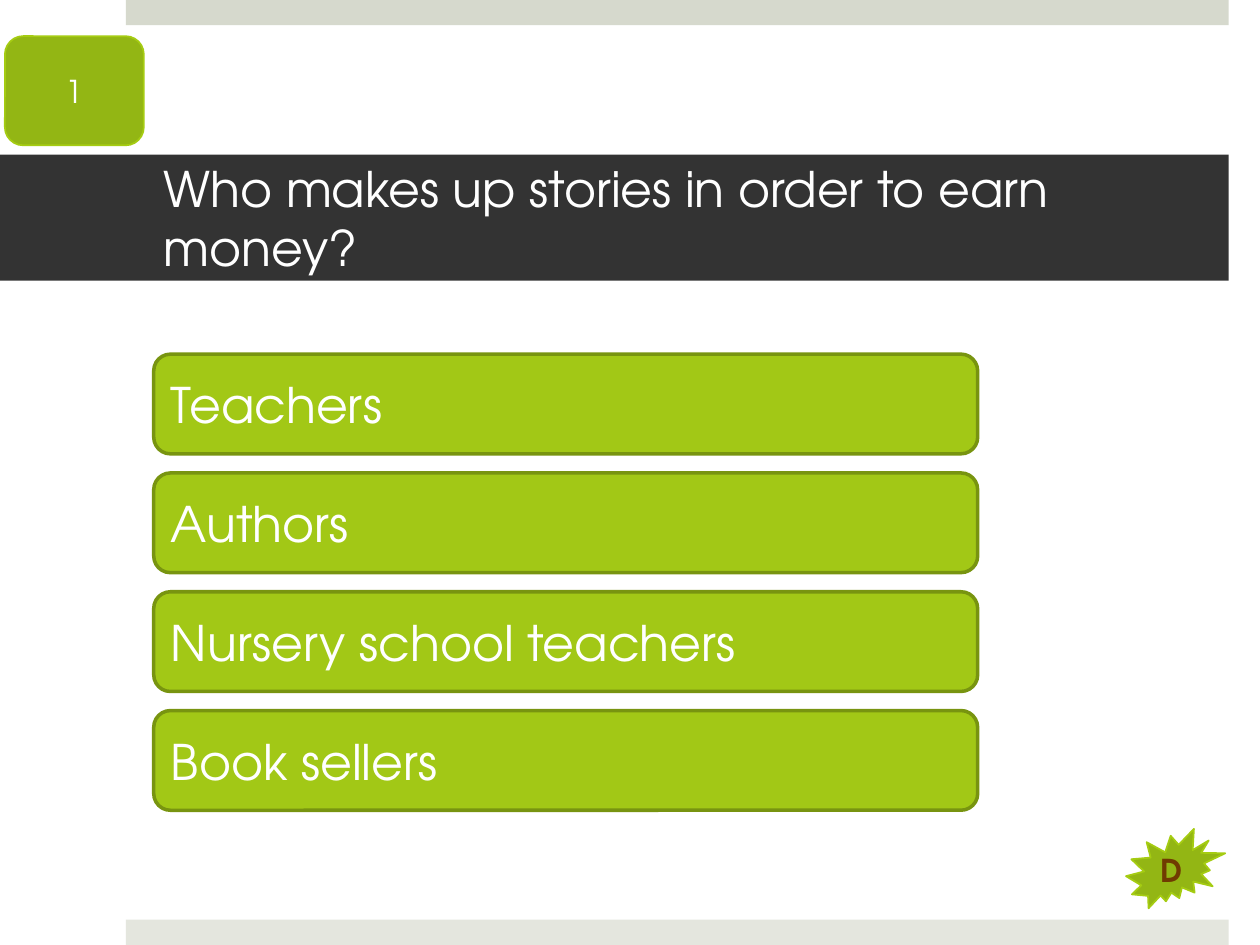
from pptx import Presentation
from pptx import util as u
from pptx.dml.color import RGBColor
from pptx.enum import shapes, text

FONT = "TeX Gyre Adventor"
ANSWERS = ["Teachers", "Authors", "Nursery school teachers", "Book sellers"]
ANSWER_TOP, ANSWER_STEP = 7.14, 2.395
BADGE = {"fill": "93B614", "line": "A5CC12", "weight": 1}
ANSWER = {"fill": "A2C816", "line": "789410", "weight": 2}


def color(value):
    return RGBColor.from_string(value)


def apply(target, values):
    for name, value in values.items():
        setattr(target, name, value)


def add_box(page, kind, place, fill, line=None, weight=1):
    box = page.shapes.add_shape(kind, *map(u.Cm, place))
    box.shadow.inherit = False
    box.fill.solid()
    box.fill.fore_color.rgb = color(fill)
    if line:
        box.line.color.rgb = color(line)
        box.line.width = u.Pt(weight)
    else:
        box.line.fill.background()
    return box


def write(box, words, size, ink="FFFFFF", bold=False, align=text.PP_ALIGN.LEFT, **frame_format):
    frame = box.text_frame
    apply(frame, {"word_wrap": True, "vertical_anchor": text.MSO_ANCHOR.MIDDLE, **frame_format})
    para = frame.paragraphs[0]
    para.alignment = align
    span = para.add_run()
    span.text = words
    apply(span.font, {"name": FONT, "size": u.Pt(size), "bold": bold})
    span.font.color.rgb = color(ink)


def add_title(page, words):
    band = add_box(page, shapes.MSO_SHAPE.RECTANGLE, (0, 3.12, 24.77, 2.54), "333333")
    write(band, words, 28, margin_left=u.Cm(3.3), margin_right=u.Cm(0.76))


def add_answers(page, answers):
    for index, words in enumerate(answers):
        place = (3.1, ANSWER_TOP + index * ANSWER_STEP, 16.61, 2.01)
        box = add_box(page, shapes.MSO_SHAPE.ROUNDED_RECTANGLE, place, **ANSWER)
        write(box, words, 28)


def add_badge(page, kind, place, words, **font_format):
    badge = add_box(page, kind, place, **BADGE)
    write(badge, words, 18, align=text.PP_ALIGN.CENTER, **font_format)


def main():
    deck = Presentation()
    apply(deck, {"slide_width": u.Cm(25.4), "slide_height": u.Cm(19.05)})
    page = deck.slides.add_slide(deck.slide_layouts[6])
    for top, fill in ((0, "D6D9CD"), (18.54, "E4E6DE")):
        add_box(page, shapes.MSO_SHAPE.RECTANGLE, (2.54, top, 22.23, 0.51), fill)
    add_title(page, "Who makes up stories in order to earn money?")
    add_answers(page, ANSWERS)
    add_badge(page, shapes.MSO_SHAPE.ROUNDED_RECTANGLE, (0.1, 0.73, 2.8, 2.2), "1")
    add_badge(page, shapes.MSO_SHAPE.EXPLOSION2, (22.7, 16.71, 2, 1.6), "D",
              ink="703B01", bold=True, word_wrap=False)
    deck.save("out.pptx")


if __name__ == "__main__":
    main()
